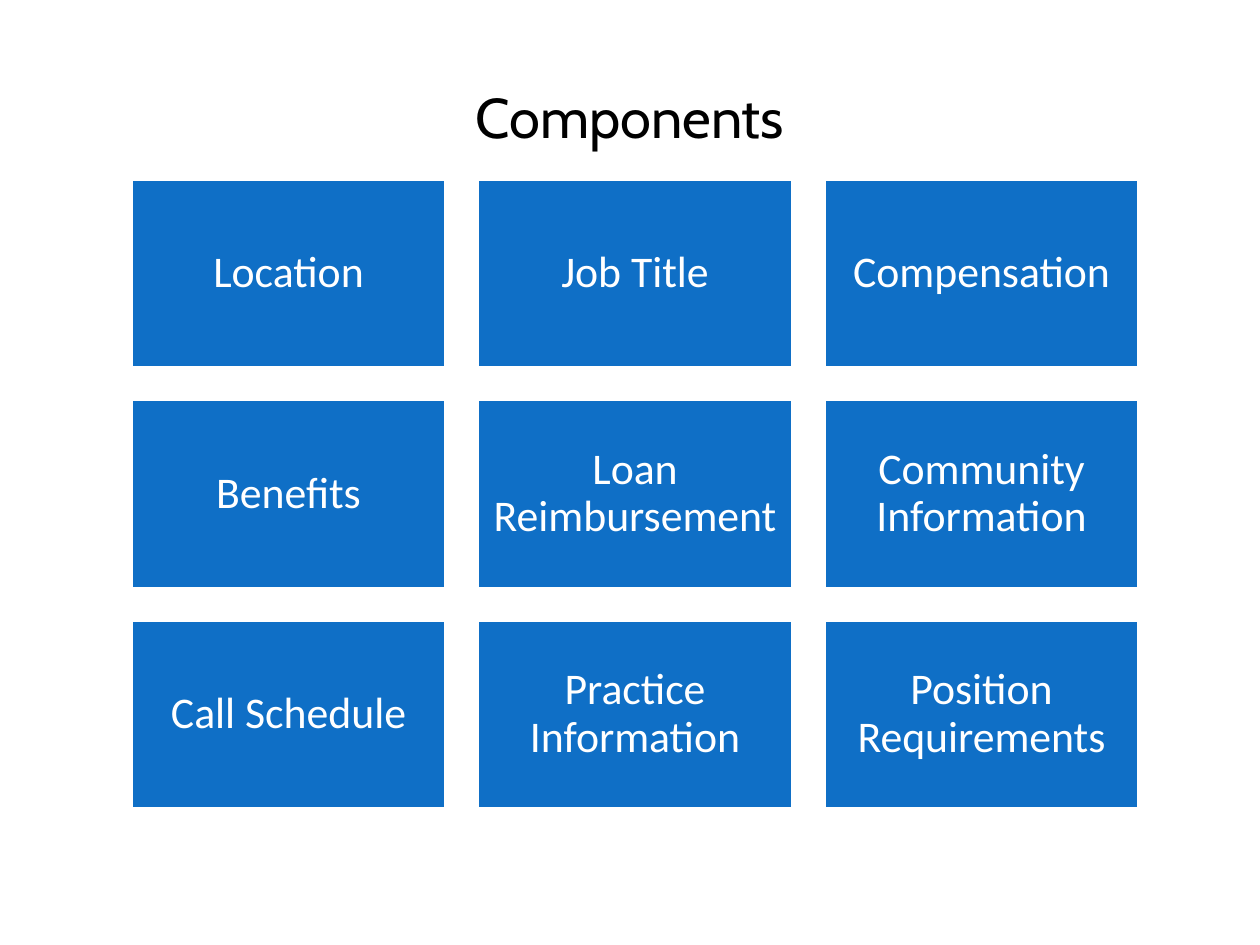
from pptx import Presentation
from pptx.dml.color import RGBColor
from pptx.enum import shapes, text
from pptx.util import Inches, Pt

COMPONENTS = [
    ["Location", "Job Title", "Compensation"],
    ["Benefits", "Loan Reimbursement", "Community Information"],
    ["Call Schedule", "Practice Information", "Position Requirements"],
]
GAP = 0.25


def color(hex_string):
    return RGBColor.from_string(hex_string)


def write_centered(sp, words, font, size, hex_string):
    tf = sp.text_frame
    tf.word_wrap = True
    tf.vertical_anchor = text.MSO_ANCHOR.MIDDLE
    p = tf.paragraphs[0]
    p.text = words
    p.alignment = text.PP_ALIGN.CENTER
    p.font.name = font
    p.font.size = Pt(size)
    p.font.color.rgb = color(hex_string)
    return tf


def add_title(s, left, top, width, height, words):
    sp = s.shapes.add_textbox(Inches(left), Inches(top), Inches(width), Inches(height))
    write_centered(sp, words, "Cabin", 32, "000000")


def add_tile(s, left, top, width, height, words):
    sp = s.shapes.add_shape(shapes.MSO_SHAPE.RECTANGLE, Inches(left), Inches(top),
                            Inches(width), Inches(height))
    sp.shadow.inherit = False
    sp.fill.solid()
    sp.fill.fore_color.rgb = color("0F6FC6")
    sp.line.color.rgb = color("FFFFFF")
    sp.line.width = Pt(2)
    tf = write_centered(sp, words, "Calibri", 25, "FFFFFF")
    tf.margin_left = tf.margin_right = tf.margin_top = tf.margin_bottom = Inches(0.1)
    tf.paragraphs[0].line_spacing = 0.9


def add_tile_grid(s, left, top, width, height, rows):
    """Fill the box with equal tiles, GAP inches apart."""
    tile_w = (width + GAP) / len(rows[0]) - GAP
    tile_h = (height + GAP) / len(rows) - GAP
    for i, row in enumerate(rows):
        for j, words in enumerate(row):
            add_tile(s, left + j * (tile_w + GAP), top + i * (tile_h + GAP),
                     tile_w, tile_h, words)


def main():
    prs = Presentation()
    prs.slide_width, prs.slide_height = Inches(10), Inches(7.5)
    s = prs.slides.add_slide(prs.slide_layouts[6])
    add_tile_grid(s, 1.04, 1.42, 8, 5, COMPONENTS)
    add_title(s, 0.5, 0.3, 9, 1.25, "Components")
    prs.save("out.pptx")


if __name__ == "__main__":
    main()
